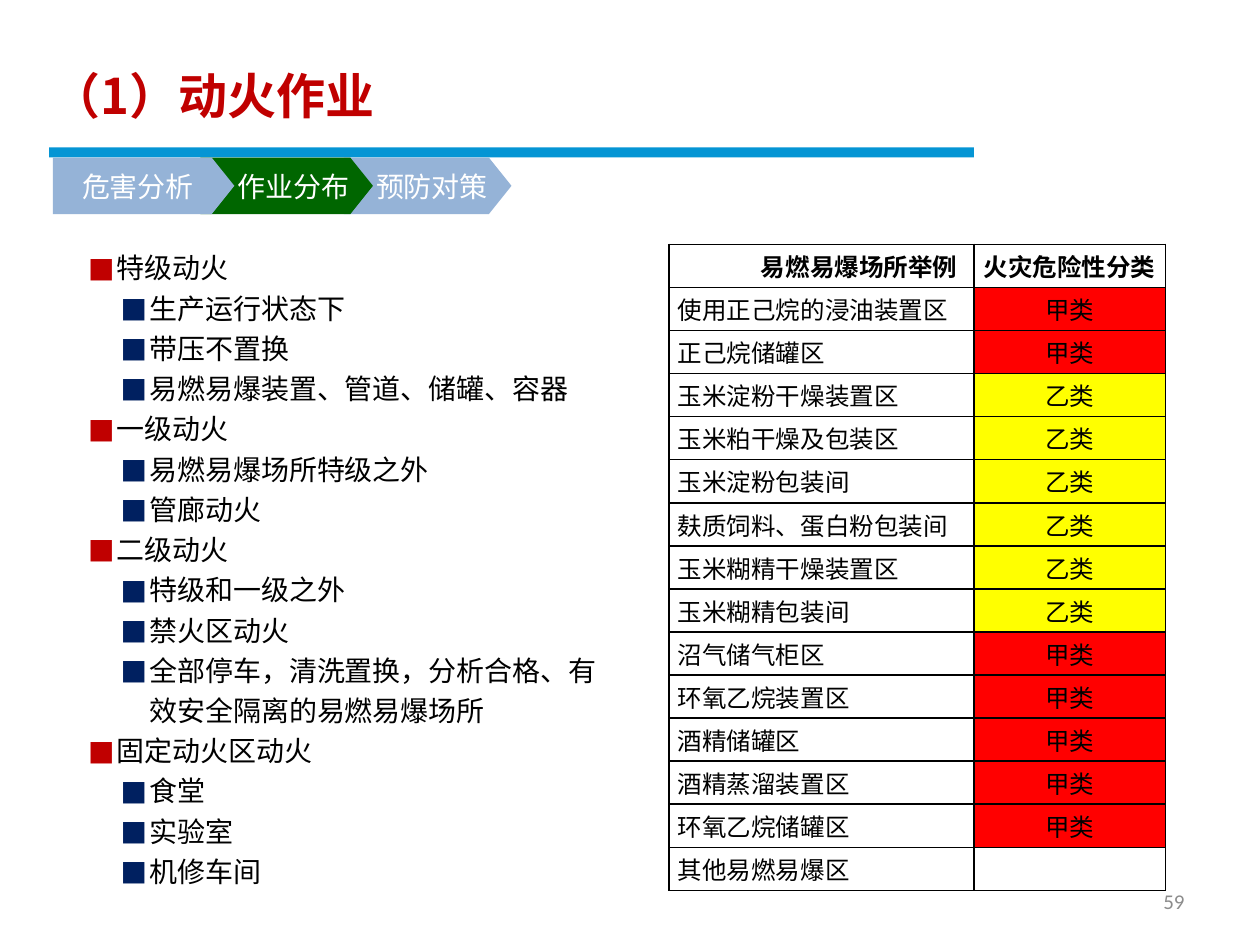
from typing import NamedTuple

from lxml.etree import SubElement
from pptx import Presentation
from pptx.dml.color import RGBColor
from pptx.enum.shapes import MSO_SHAPE as Shape
from pptx.enum.text import MSO_ANCHOR as Anchor, PP_ALIGN as Align
from pptx.oxml.ns import qn
from pptx.util import Inches, Pt

COLORS = {
    "bar": "0595D4", "title": "C00000", "topic": "C00000", "detail": "002060",
    "step": "95B3D7", "current": "006600", "甲类": "FF0000", "乙类": "FFFF00",
    "black": "000000", "white": "FFFFFF", "gray": "8C8C8C",
}
CHINESE = "Noto Sans CJK SC"
LATIN = "Calibri"


class Step(NamedTuple):
    label: str
    left: float
    width: float
    color: str
    align: Align


class Topic(NamedTuple):
    name: str
    details: list[str]


class Area(NamedTuple):
    name: str
    hazard: str


STEPS = [
    Step("预防对策", 2.73, 1.33, "step", Align.RIGHT),
    Step("作业分布", 1.59, 1.37, "current", Align.RIGHT),
    Step("危害分析", 0.42, 1.44, "step", Align.CENTER),
]
TOPICS = [
    Topic("特级动火", ["生产运行状态下", "带压不置换", "易燃易爆装置、管道、储罐、容器"]),
    Topic("一级动火", ["易燃易爆场所特级之外", "管廊动火"]),
    Topic("二级动火", ["特级和一级之外", "禁火区动火",
                   "全部停车，清洗置换，分析合格、有效安全隔离的易燃易爆场所"]),
    Topic("固定动火区动火", ["食堂", "实验室", "机修车间"]),
]
AREAS = [
    Area("使用正己烷的浸油装置区", "甲类"),
    Area("正己烷储罐区", "甲类"),
    Area("玉米淀粉干燥装置区", "乙类"),
    Area("玉米粕干燥及包装区", "乙类"),
    Area("玉米淀粉包装间", "乙类"),
    Area("麸质饲料、蛋白粉包装间", "乙类"),
    Area("玉米糊精干燥装置区", "乙类"),
    Area("玉米糊精包装间", "乙类"),
    Area("沼气储气柜区", "甲类"),
    Area("环氧乙烷装置区", "甲类"),
    Area("酒精储罐区", "甲类"),
    Area("酒精蒸溜装置区", "甲类"),
    Area("环氧乙烷储罐区", "甲类"),
    Area("其他易燃易爆区", ""),
]


def rgb(name: str) -> RGBColor:
    return RGBColor.from_string(COLORS[name])


def add_run(para, text: str, size: float, color: str, bold: bool = False,
            font: str = CHINESE) -> None:
    span = para.add_run()
    span.text = text
    span.font.size = Pt(size)
    span.font.bold = bold
    span.font.name = font
    span.font.color.rgb = rgb(color)
    SubElement(span.font._element, qn("a:ea"), typeface=font)


def set_indent(para, left: float, first: float) -> None:
    properties = para._p.get_or_add_pPr()
    properties.set("marL", str(Inches(left)))
    properties.set("indent", str(Inches(first)))


def add_bullet(para, color: str) -> None:
    properties = para._p.get_or_add_pPr()
    bullet_color = SubElement(properties, qn("a:buClr"))
    SubElement(bullet_color, qn("a:srgbClr"), val=COLORS[color])
    SubElement(properties, qn("a:buFont"), typeface=LATIN)
    SubElement(properties, qn("a:buChar"), char="■")


def add_block(slide, kind: Shape, left: float, top: float, width: float,
              height: float, color: str):
    block = slide.shapes.add_shape(
        kind, Inches(left), Inches(top), Inches(width), Inches(height))
    block.shadow.inherit = False
    block.fill.solid()
    block.fill.fore_color.rgb = rgb(color)
    block.line.fill.background()
    return block


def add_step(slide, step: Step) -> None:
    arrow = add_block(slide, Shape.PENTAGON, step.left, 1.25, step.width, 0.45, step.color)
    arrow.adjustments[0] = 0.4
    frame = arrow.text_frame
    frame.word_wrap = False
    frame.vertical_anchor = Anchor.MIDDLE
    para = frame.paragraphs[0]
    para.alignment = step.align
    add_run(para, step.label, 16, "white")


def format_title(slide) -> None:
    title = slide.shapes.title
    title.left, title.top = Inches(0.31), Inches(0.47)
    title.width, title.height = Inches(7.5), Inches(0.57)
    frame = title.text_frame
    frame.word_wrap = True
    frame.vertical_anchor = Anchor.MIDDLE
    frame.margin_top = frame.margin_bottom = 0
    para = frame.paragraphs[0]
    para.alignment = Align.LEFT
    set_indent(para, 0.53, -0.53)
    add_run(para, "（1）动火作业", 28, "title", bold=True)


def add_page_number(slide, number: str) -> None:
    box = slide.shapes.add_textbox(Inches(7.17), Inches(6.95), Inches(2.33), Inches(0.4))
    box.text_frame.word_wrap = True
    box.text_frame.vertical_anchor = Anchor.MIDDLE
    para = box.text_frame.paragraphs[0]
    para.alignment = Align.RIGHT
    add_run(para, number, 12, "gray", font=LATIN)


def add_outline(slide, topics: list[Topic]) -> None:
    box = slide.shapes.add_textbox(Inches(0.59), Inches(1.89), Inches(4.33), Inches(5.24))
    frame = box.text_frame
    frame.word_wrap = True
    lines = [(text, level) for topic in topics
             for text, level in [(topic.name, 0), *((item, 1) for item in topic.details)]]
    for index, (text, level) in enumerate(lines):
        para = frame.add_paragraph() if index else frame.paragraphs[0]
        para.level = level
        para.alignment = Align.LEFT
        para.line_spacing = Pt(23)
        set_indent(para, 0.5 if level else 0.24, -0.23)
        add_bullet(para, "detail" if level else "topic")
        add_run(para, text, 16, "black")


def format_cell(cell, text: str, align: Align, bold: bool) -> None:
    cell.vertical_anchor = Anchor.MIDDLE
    cell.margin_left = cell.margin_right = Inches(0.07)
    cell.margin_top = cell.margin_bottom = 0
    properties = cell._tc.get_or_add_tcPr()
    for side in ("lnL", "lnR", "lnT", "lnB"):
        border = SubElement(properties, qn(f"a:{side}"), w=str(Pt(1)))
        fill = SubElement(border, qn("a:solidFill"))
        SubElement(fill, qn("a:srgbClr"), val=COLORS["black"])
    if text in COLORS:
        cell.fill.solid()
        cell.fill.fore_color.rgb = rgb(text)
    else:
        cell.fill.background()
    para = cell.text_frame.paragraphs[0]
    para.alignment = align
    if text:
        add_run(para, text, 14, "black", bold)


def add_area_table(slide, areas: list[Area]) -> None:
    rows = [Area("易燃易爆场所举例", "火灾危险性分类"), *areas]
    table = slide.shapes.add_table(
        len(rows), 2, Inches(5.31), Inches(1.94), Inches(3.94), Inches(5.13)).table
    table.first_row = table.horz_banding = False
    table.columns[0].width, table.columns[1].width = Inches(2.42), Inches(1.52)
    for index, area in enumerate(rows):
        format_cell(table.cell(index, 0), area.name, Align.JUSTIFY, index == 0)
        format_cell(table.cell(index, 1), area.hazard, Align.CENTER, index == 0)
    set_indent(table.cell(0, 0).text_frame.paragraphs[0], 0, 0.66)


def main() -> None:
    deck = Presentation()
    deck.slide_width, deck.slide_height = Inches(10), Inches(7.5)
    page = deck.slides.add_slide(deck.slide_layouts[5])
    add_block(page, Shape.RECTANGLE, 0.39, 1.17, 7.34, 0.08, "bar")
    add_page_number(page, "59")
    add_area_table(page, AREAS)
    add_outline(page, TOPICS)
    for step in STEPS:
        add_step(page, step)
    format_title(page)
    deck.save("out.pptx")


if __name__ == "__main__":
    main()
